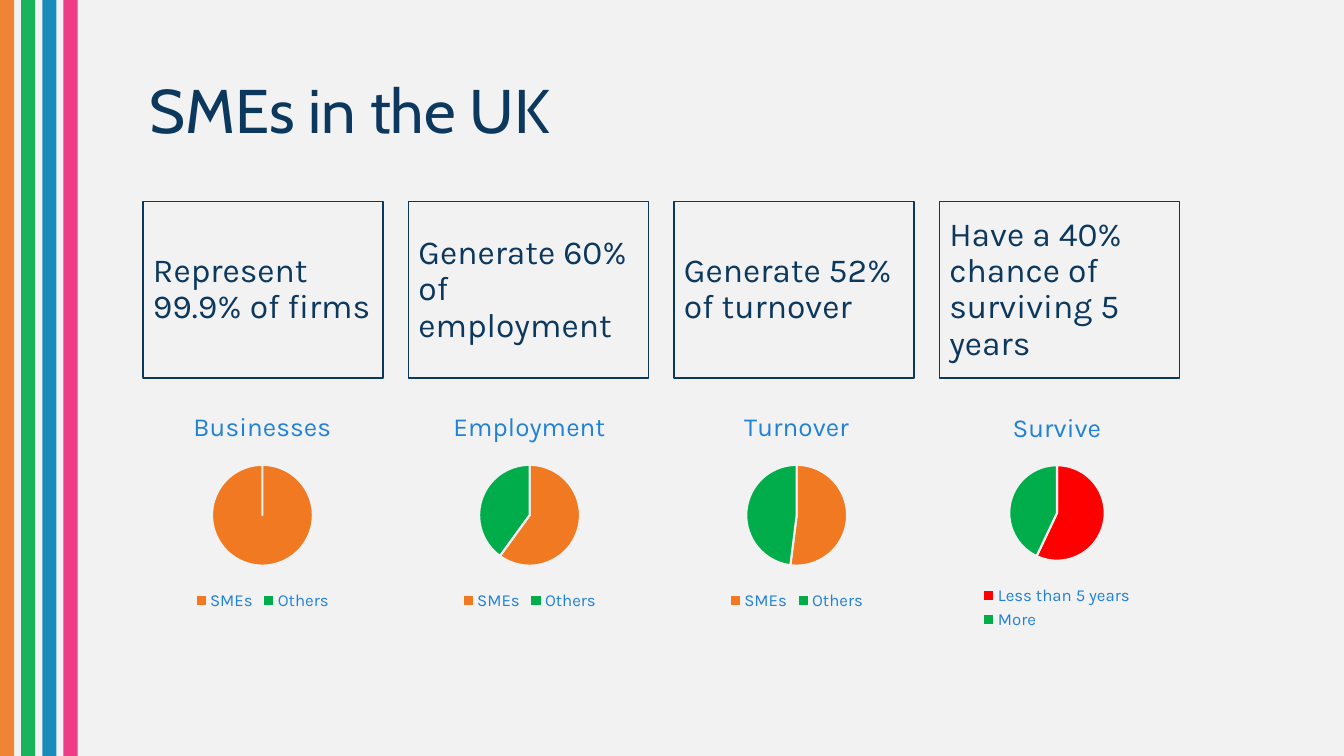
from dataclasses import dataclass

from lxml import etree
from pptx import Presentation
from pptx import util as u
from pptx.chart import data
from pptx.dml import color
from pptx.enum import chart as charts, shapes, text
from pptx.oxml import ns


@dataclass(frozen=True)
class Theme:
    """Colours, fonts and type sizes of the slide."""
    paper: str = "F2F2F2"
    navy: str = "0D385E"
    blue: str = "2081D8"
    orange: str = "F07921"
    green: str = "01AD4B"
    red: str = "FF0000"
    stripes: tuple = ("F07921", "01AD4B", "0281B4", "EE297B")
    heading: str = "Cabin"
    body: str = "Karla"
    heading_size: float = 44
    fact_size: float = 24
    caption_size: float = 18.6
    key_size: float = 12


def paint(fill, tone):
    """Fill with one solid colour."""
    fill.solid()
    fill.fore_color.rgb = color.RGBColor.from_string(tone)


def apply(target, formats):
    """Set each format value on the target."""
    for name, value in formats.items():
        setattr(target, name, value)


class Deck:
    """Draws the elements of the current slide in one theme."""

    def __init__(self, theme, slide):
        self.theme = theme
        self.slide = slide
        paint(slide.background.fill, theme.paper)

    def style(self, font, name, size, tone):
        apply(font, {"name": name, "size": u.Pt(size), "bold": False})
        font.color.rgb = color.RGBColor.from_string(tone)

    def rectangle(self, *box):
        rect = self.slide.shapes.add_shape(
            shapes.MSO_SHAPE.RECTANGLE, *map(u.Pt, box))
        rect.shadow.inherit = False
        return rect

    def stripe(self, left, tone):
        band = self.rectangle(left, 0, 10.1, 540)
        paint(band.fill, tone)
        band.line.fill.background()
        tint = band.element.spPr.find(".//" + ns.qn("a:srgbClr"))
        etree.SubElement(tint, ns.qn("a:alpha"), val="90000")

    def wording(self, frame, words, name, size):
        apply(frame, {"word_wrap": True, "text": words,
                      "vertical_anchor": text.MSO_ANCHOR.MIDDLE})
        line = frame.paragraphs[0]
        apply(line, {"alignment": text.PP_ALIGN.LEFT, "line_spacing": 0.9})
        self.style(line.runs[0].font, name, size, self.theme.navy)

    def heading(self, words):
        box = self.slide.shapes.add_textbox(
            *map(u.Pt, (100, 28.8, 630.7, 104.4)))
        self.wording(box.text_frame, words,
                     self.theme.heading, self.theme.heading_size)

    def fact(self, left, words):
        card = self.rectangle(left, 144, 171.4, 126)
        card.fill.background()
        paint(card.line.fill, self.theme.navy)
        card.line.width = u.Pt(1)
        self.wording(card.text_frame, words,
                     self.theme.body, self.theme.fact_size)

    def pie(self, box, caption, shares, tones):
        theme = self.theme
        split = data.CategoryChartData()
        split.categories = list(shares)
        split.add_series(caption, list(shares.values()))
        pie = self.slide.shapes.add_chart(
            charts.XL_CHART_TYPE.PIE, *map(u.Pt, box), split).chart
        self.style(pie.font, theme.body, 10, theme.navy)
        apply(pie, {"has_title": True, "has_legend": True})
        title = pie.chart_title.text_frame
        title.text = caption
        self.style(title.paragraphs[0].runs[0].font,
                   theme.body, theme.caption_size, theme.blue)
        apply(pie.legend, {"position": charts.XL_LEGEND_POSITION.BOTTOM,
                           "include_in_layout": False})
        self.style(pie.legend.font, theme.body, theme.key_size, theme.blue)
        plot = pie.plots[0]
        plot.vary_by_categories = True
        for index, tone in enumerate(tones):
            slice_format = plot.series[0].points[index].format
            paint(slice_format.fill, tone)
            paint(slice_format.line.fill, theme.paper)
            slice_format.line.width = u.Pt(1.5)


def main():
    """Build and save the slide."""
    theme = Theme()
    show = Presentation()
    apply(show, {"slide_width": u.Pt(960), "slide_height": u.Pt(540)})
    deck = Deck(theme, show.slides.add_slide(show.slide_layouts[6]))
    for index, tone in enumerate(theme.stripes):
        deck.stripe(15.12 * index, tone)
    deck.heading("SMEs in the UK")

    facts = ("Represent 99.9% of firms", "Generate 60% of employment",
             "Generate 52% of turnover",
             "Have a 40% chance of surviving 5 years")
    for index, words in enumerate(facts):
        deck.fact(102.2 + 189.6 * index, words)

    sme_shares = {"Businesses": 100, "Employment": 60, "Turnover": 52}
    for index, (caption, share) in enumerate(sme_shares.items()):
        deck.pie((113 + 190.8 * index, 282.2, 149, 157), caption,
                 {"SMEs": share, "Others": 100 - share},
                 (theme.orange, theme.green))
    deck.pie((679, 282.2, 152, 170.6), "Survive",
             {"Less than 5 years": 57, "More": 43},
             (theme.red, theme.green))
    show.save("out.pptx")


if __name__ == "__main__":
    main()
